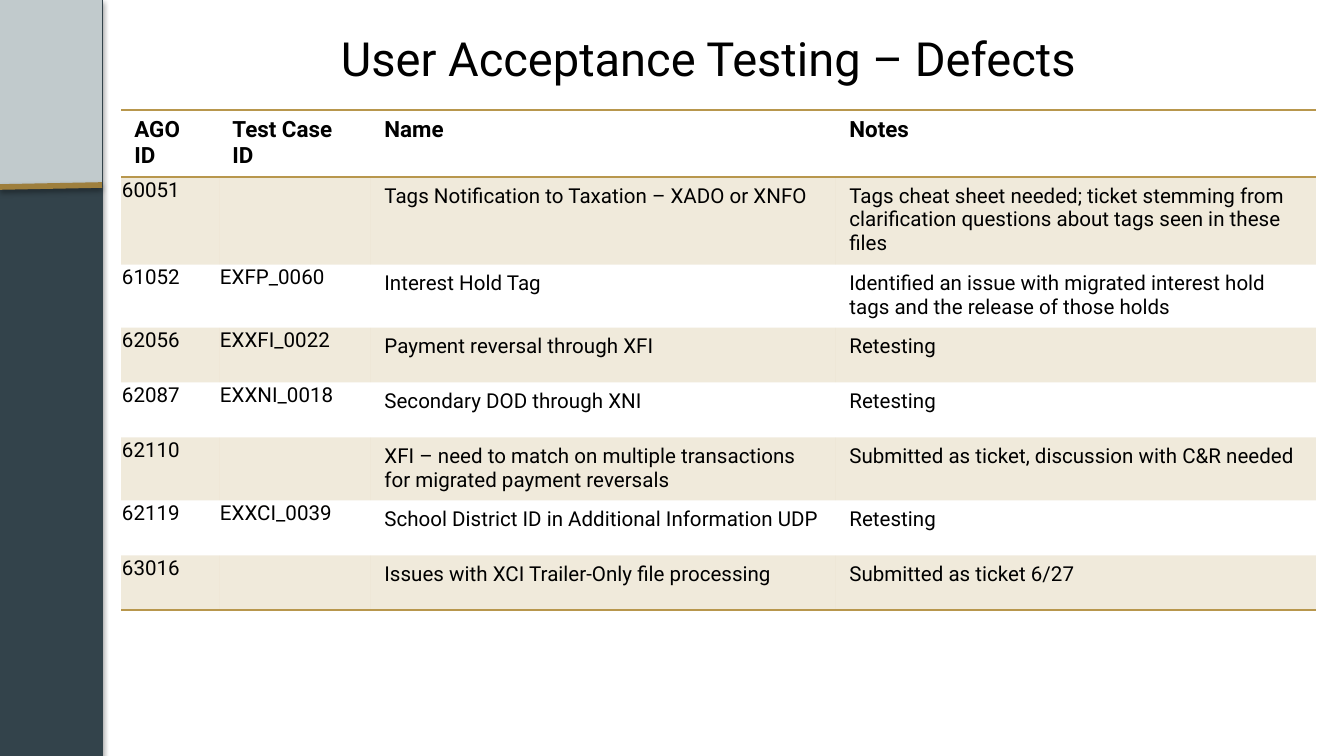
from lxml.etree import SubElement as Sub
from pptx import Presentation
from pptx.dml.color import RGBColor as RGB
from pptx.enum.shapes import MSO_CONNECTOR as Conn, MSO_SHAPE as Kind
from pptx.enum.text import MSO_ANCHOR as Anchor, PP_ALIGN as Align
from pptx.oxml.ns import qn
from pptx.util import Pt

SCALE = 914400 / 134.4
PLAIN = "{2D5ABB26-0587-4C30-8999-92F81FD0307C}"  # no style, no grid
GOLD = "B8974D"

HEAD = ["AGO ID", "Test Case ID", "Name", "Notes"]
ROWS = [
    ["60051", "", "Tags Notification to Taxation – XADO or XNFO",
     "Tags cheat sheet needed; ticket stemming from clarification "
     "questions about tags seen in these files"],
    ["61052", "EXFP_0060", "Interest Hold Tag",
     "Identified an issue with migrated interest hold tags "
     "and the release of those holds"],
    ["62056", "EXXFI_0022", "Payment reversal through XFI", "Retesting"],
    ["62087", "EXXNI_0018", "Secondary DOD through XNI", "Retesting"],
    ["62110", "",
     "XFI – need to match on multiple transactions "
     "for migrated payment reversals",
     "Submitted as ticket, discussion with C&R needed"],
    ["62119", "EXXCI_0039",
     "School District ID in Additional Information UDP", "Retesting"],
    ["63016", "", "Issues with XCI Trailer-Only file processing",
     "Submitted as ticket 6/27"],
]


def px(n):
    return round(n * SCALE)


def color(code):
    return RGB.from_string(code)


def shade(shape, alpha, blur, dist):
    """Give the shape a black shadow that falls straight down."""
    effects = Sub(shape._element.spPr, qn("a:effectLst"))
    cast = Sub(effects, qn("a:outerShdw"), blurRad=str(Pt(blur)),
               dist=str(Pt(dist)), dir="5400000", rotWithShape="0")
    tone = Sub(cast, qn("a:srgbClr"), val="000000")
    Sub(tone, qn("a:alpha"), val=str(alpha * 1000))


def border(cell, side):
    """Draw a gold edge; side is T or B."""
    props = cell._tc.get_or_add_tcPr()
    edge = Sub(props, qn(f"a:ln{side}"), w=str(Pt(1)))
    paint = Sub(edge, qn("a:solidFill"))
    Sub(paint, qn("a:srgbClr"), val=GOLD)
    lines = len(props.findall(qn("a:lnT")) + props.findall(qn("a:lnB")))
    props.insert(lines - 1, edge)


class Deck:
    font = "Roboto"
    ink = "000000"

    def __init__(self, wide, high):
        self.prs = Presentation()
        self.prs.slide_width, self.prs.slide_height = px(wide), px(high)
        self.slide = self.prs.slides.add_slide(self.prs.slide_layouts[6])
        self.shapes = self.slide.shapes

    def style(self, para, size, bold=False):
        font = para.font
        font.name, font.size, font.bold = self.font, Pt(size), bold
        font.color.rgb = color(self.ink)

    def rect(self, x, y, w, h, fill, line=None):
        box = self.shapes.add_shape(Kind.RECTANGLE, px(x), px(y), px(w), px(h))
        box.fill.solid()
        box.fill.fore_color.rgb = color(fill)
        if line:
            box.line.color.rgb = color(line)
            box.line.width = Pt(0.75)
            shade(box, 35, 3.1, 1.8)
        else:
            box.line.fill.background()
            box.shadow.inherit = False

    def rule(self, x1, y1, x2, y2, tone, width):
        line = self.shapes.add_connector(
            Conn.STRAIGHT, px(x1), px(y1), px(x2), px(y2))
        line.line.color.rgb = color(tone)
        line.line.width = Pt(width)
        shade(line, 38, 3.1, 1.6)

    def title(self, x, y, w, h, text):
        frame = self.shapes.add_textbox(px(x), px(y), px(w), px(h)).text_frame
        frame.word_wrap = True
        frame.vertical_anchor = Anchor.MIDDLE
        para = frame.paragraphs[0]
        para.text, para.alignment = text, Align.CENTER
        self.style(para, 25.2)

    def cell(self, cell, text, head, band, tight):
        cell.text = text
        self.style(cell.text_frame.paragraphs[0], 12 if head else 11, head)
        if tight:
            cell.margin_left = cell.margin_right = cell.margin_top = px(1)
            cell.margin_bottom = 0
        if band:
            cell.fill.solid()
            cell.fill.fore_color.rgb = color(GOLD)
            tone = cell._tc.tcPr.find(".//" + qn("a:srgbClr"))
            Sub(tone, qn("a:alpha"), val="20000")
        else:
            cell.fill.background()

    def table(self, x, y, cols, top, step, rows):
        high = top + step * (len(rows) - 1)
        table = self.shapes.add_table(len(rows), len(cols), px(x), px(y),
                                      px(sum(cols)), px(high)).table
        table.first_row = table.horz_banding = False
        table._tbl.tblPr.find(qn("a:tableStyleId")).text = PLAIN
        for col, wide in zip(table.columns, cols):
            col.width = px(wide)
        for r, row in enumerate(rows):
            table.rows[r].height = px(step if r else top)
            for c, text in enumerate(row):
                cell = table.cell(r, c)
                self.cell(cell, text, r == 0, r % 2 == 1,
                          r > 0 and c < 2 and text)
                if r == 0:
                    border(cell, "T")
                if r in (0, len(rows) - 1):
                    border(cell, "B")

    def save(self):
        self.prs.save("out.pptx")


def main():
    deck = Deck(1344, 756)
    deck.rect(0, 0, 102, 756, "33434B", "33434B")
    deck.rect(0, 0, 102, 185, "C1CACC")
    deck.rule(0, 187, 102, 185, "9E7F3D", 3)
    deck.title(132, 23, 1153, 69, "User Acceptance Testing – Defects")
    deck.table(121, 110, [98, 152, 465, 480], 43, 55, [HEAD] + ROWS)
    deck.save()


if __name__ == "__main__":
    main()
